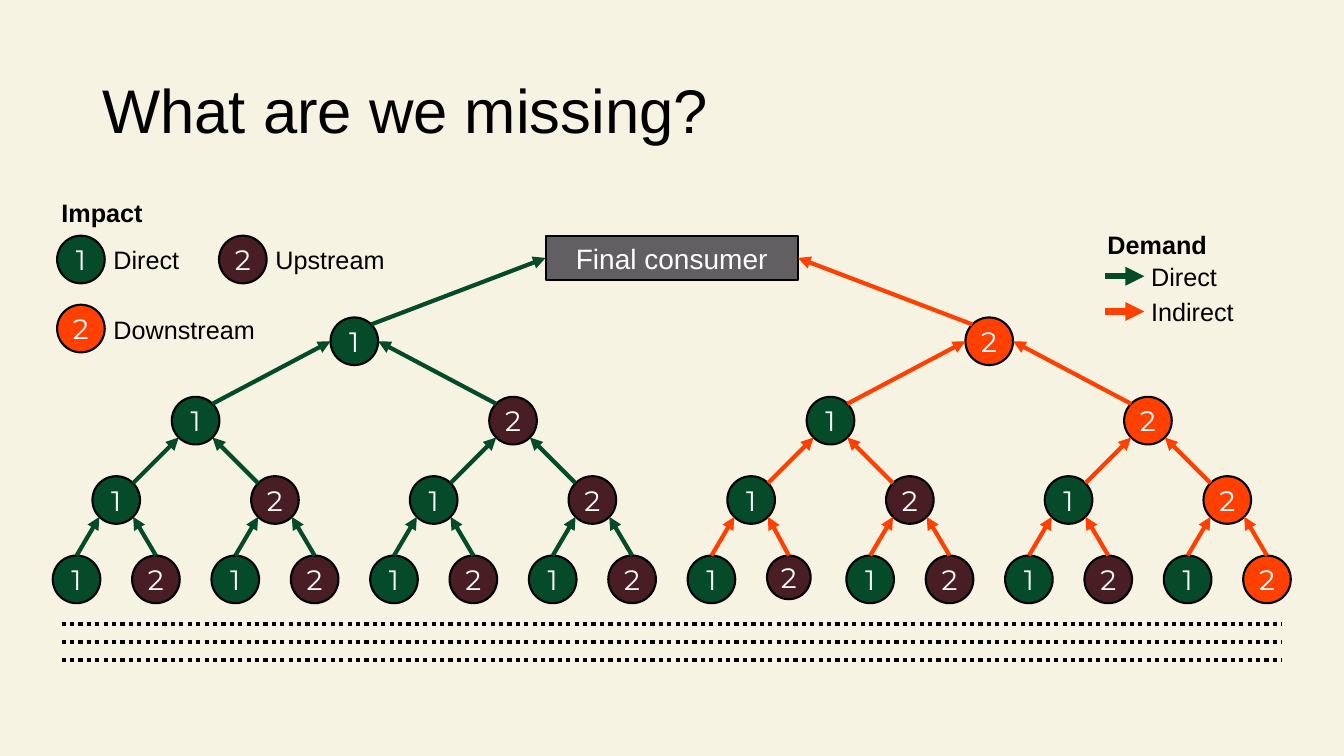
from math import sqrt

from lxml.etree import SubElement
from pptx import Presentation
from pptx.dml.color import RGBColor
from pptx.enum.dml import MSO_LINE
from pptx.enum.shapes import MSO_CONNECTOR, MSO_SHAPE
from pptx.enum.text import MSO_ANCHOR, MSO_AUTO_SIZE, PP_ALIGN
from pptx.oxml.ns import qn
from pptx.util import Cm, Pt

CREAM, GREEN, PLUM, ORANGE = "F7F3E3", "054A29", "481D24", "FF4000"
GREY, BLACK, WHITE = "625F63", "000000", "FFFFFF"
SIZE = 1.2
ROWS = 4
SLANT = sqrt(0.5)


def paint(target, code):
    if hasattr(target, "solid"):
        target.solid()
        target = target.fore_color
    target.rgb = RGBColor.from_string(code)


def write(frame, text, size=18, font="Arial", color=BLACK, bold=False,
          align=PP_ALIGN.LEFT, anchor=MSO_ANCHOR.TOP, inset=0, spacing=None):
    frame.word_wrap = True
    frame.auto_size = MSO_AUTO_SIZE.NONE
    frame.vertical_anchor = anchor
    frame.margin_left = frame.margin_right = Cm(inset)
    frame.margin_top = frame.margin_bottom = Cm(inset / 2)
    para = frame.paragraphs[0]
    para.alignment = align
    para.line_spacing = spacing
    run = para.add_run()
    run.text = text
    run.font.name = font
    run.font.size = Pt(size)
    run.font.bold = bold
    paint(run.font.color, color)


class Board:
    def __init__(self, deck):
        self.slide = deck.slides.add_slide(deck.slide_layouts[5])
        self.shapes = self.slide.shapes
        paint(self.slide.background.fill, CREAM)

    def title(self, text):
        head = self.shapes.title
        head.left, head.top = Cm(2.33), Cm(1.01)
        head.width, head.height = Cm(29.21), Cm(3.68)
        write(head.text_frame, text, size=44, anchor=MSO_ANCHOR.MIDDLE,
              inset=0.25, spacing=0.9)

    def shape(self, kind, left, top, width, height, fill, text, font="Arial"):
        item = self.shapes.add_shape(kind, Cm(left), Cm(top), Cm(width), Cm(height))
        item.shadow.inherit = False
        paint(item.fill, fill)
        paint(item.line.fill, BLACK)
        item.line.width = Pt(1.5)
        write(item.text_frame, text, size=20, font=font, color=WHITE,
              align=PP_ALIGN.CENTER, anchor=MSO_ANCHOR.MIDDLE)
        return item

    def node(self, left, top, fill, size=SIZE):
        digit = "1" if fill == GREEN else "2"
        self.shape(MSO_SHAPE.OVAL, left, top, size, size, fill, digit, "Montserrat")

    def label(self, left, top, text, bold=False):
        box = self.shapes.add_textbox(Cm(left), Cm(top), Cm(3.7), Cm(0.76))
        write(box.text_frame, text, bold=bold)

    def line(self, start, end, color, width=3, arrow=True):
        link = self.shapes.add_connector(
            MSO_CONNECTOR.STRAIGHT, *(Cm(v) for v in (*start, *end)))
        paint(link.line.fill, color)
        link.line.width = Pt(width)
        if arrow:
            SubElement(link.line._get_or_add_ln(), qn("a:headEnd"), type="triangle")
        else:
            link.line.dash_style = MSO_LINE.ROUND_DOT
        SubElement(link._element.spPr, qn("a:effectLst"))
        return link


def place(row, col):
    pitch = 16 / 2 ** row
    size = 1.1 if (row, col) == (3, 9) else SIZE
    return 0.33 + pitch * (col + 0.5), 8 + 2 * row, size


def rim(row, col, across, down):
    left, top, size = place(row, col)
    half = size / 2
    return left + half * (1 + across), top + half * (1 + down)


def draw_tree(board):
    for row in range(ROWS):
        count = 2 ** (row + 1)
        for col in range(count):
            left, top, size = place(row, col)
            fill = ORANGE if col == count - 1 else PLUM if col % 2 else GREEN
            board.node(left, top, fill, size)

    buyer = board.shape(MSO_SHAPE.RECTANGLE, 13.75, 5.94, 6.36, 1.12, GREY,
                        "Final consumer")
    for row in range(ROWS):
        count = 2 ** (row + 1)
        for col in range(count):
            side = 1 if col % 2 else -1
            color = GREEN if col < count / 2 else ORANGE
            if row == ROWS - 1:
                end = rim(row, col, 0, -1)
            else:
                end = rim(row, col, -side * SLANT, -SLANT)
            if row == 0:
                link = board.line((16.93, 6.5), end, color)
                link.begin_connect(buyer, 2 + side)
            elif row == 1:
                board.line(rim(0, col // 2, side, 0), end, color)
            else:
                board.line(rim(row - 1, col // 2, side * SLANT, SLANT), end, color)


def draw_keys(board):
    board.label(1.55, 4.98, "Impact", bold=True)
    for left, top, drop, fill, text in (
            (1.44, 5.94, 0.21, GREEN, "Direct"),
            (5.52, 5.94, 0.21, PLUM, "Upstream"),
            (1.44, 7.68, 0.24, ORANGE, "Downstream")):
        board.node(left, top, fill)
        board.label(left + 1.42, top + drop, text)

    board.label(27.91, 5.77, "Demand", bold=True)
    for top, color, text in ((6.96, GREEN, "Direct"), (7.85, ORANGE, "Indirect")):
        board.line((28.84, top), (27.85, top), color, width=4.5)
        board.label(29.01, top - 0.38, text)


def main():
    deck = Presentation()
    deck.slide_width, deck.slide_height = Cm(33.87), Cm(19.05)
    board = Board(deck)
    board.title("What are we missing?")
    draw_tree(board)
    for step in range(3):
        top = 15.72 + 0.46 * step
        board.line((1.55, top), (32.31, top), BLACK, arrow=False)
    draw_keys(board)
    deck.save("out.pptx")


if __name__ == "__main__":
    main()
